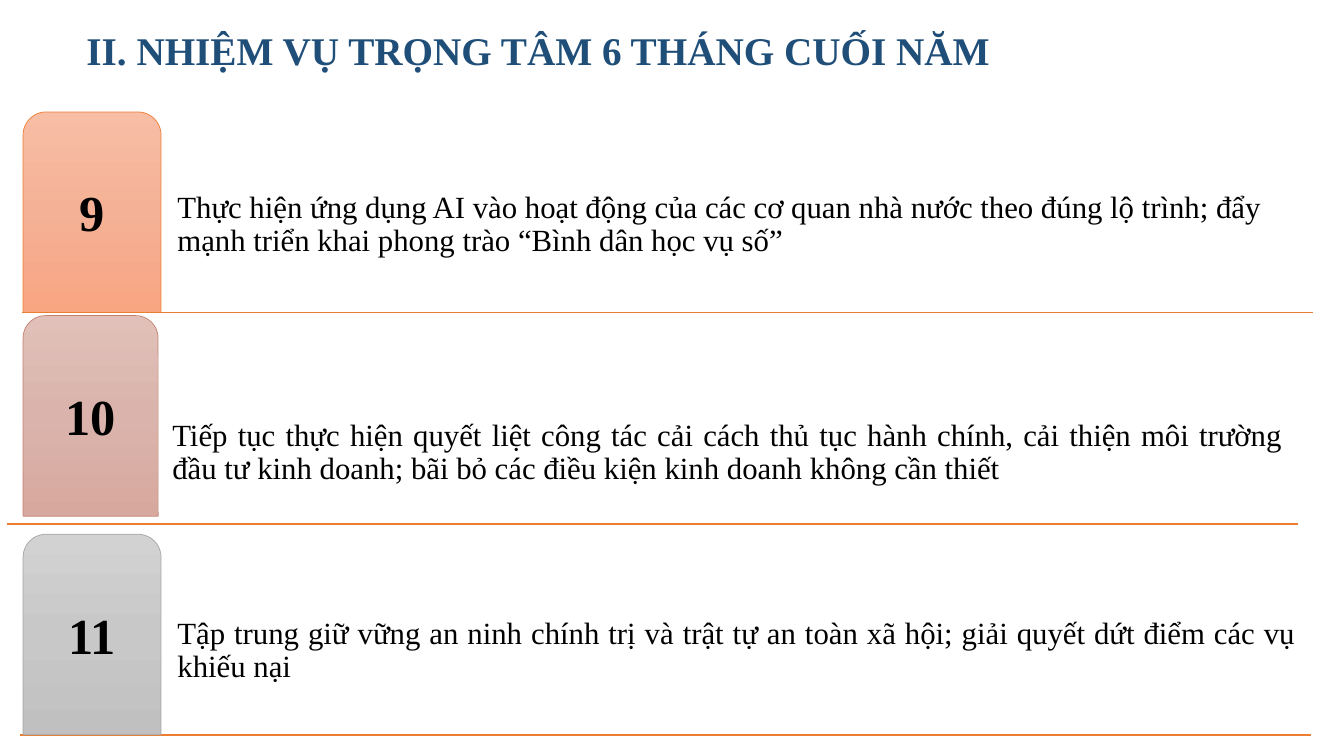
from copy import deepcopy

from pptx import Presentation
from pptx.dml.color import RGBColor
from pptx.enum.shapes import MSO_CONNECTOR, MSO_SHAPE
from pptx.enum.text import MSO_ANCHOR as Anchor, PP_ALIGN as Align
from pptx.oxml.ns import qn
from pptx.util import Pt
from lxml.etree import SubElement


def color(value):
    return RGBColor.from_string(value)


def write(shape, text, size, shade, bold, align, anchor, inset):
    frame = shape.text_frame
    frame.text = text
    frame.word_wrap = True
    frame.vertical_anchor = anchor
    frame.margin_left = frame.margin_right = Pt(inset)
    frame.margin_top = frame.margin_bottom = Pt(inset)
    para = frame.paragraphs[0]
    para.alignment = align
    para.line_spacing = 0.9
    font = para.runs[0].font
    font.name = "Times New Roman"
    font.size = Pt(size)
    font.bold = bold
    font.color.rgb = color(shade)


deck = Presentation()
deck.slide_width, deck.slide_height = Pt(960), Pt(540)
page = deck.slides.add_slide(deck.slide_layouts[6])

title = page.shapes.add_textbox(Pt(54.7), Pt(15.1), Pt(668), Pt(41))
write(title, "II. NHIỆM VỤ TRỌNG TÂM 6 THÁNG CUỐI NĂM", 28, "1F4E79", True,
      Align.LEFT, Anchor.TOP, 3.6)
title.text_frame.margin_left = title.text_frame.margin_right = Pt(7.2)
title.text_frame.paragraphs[0].line_spacing = 1.0

for left, top in [(14.4, 524.9), (5, 374.4), (15.8, 223.4)]:
    rule = page.shapes.add_connector(
        MSO_CONNECTOR.STRAIGHT, Pt(left), Pt(top), Pt(left + 922.3), Pt(top))
    rule.line.color.rgb = color("ED7D31")
    rule.line.width = Pt(1)
    SubElement(rule._element.spPr, qn("a:effectLst"))

tasks = [
    ("9", 80, 98.6, ["F7BDA5", "F5B196", "F8A582"], "ED7D31",
     "Thực hiện ứng dụng AI vào hoạt động của các cơ quan nhà nước theo đúng lộ trình; "
     "đẩy mạnh triển khai phong trào “Bình dân học vụ số”",
     (123.1, 113, 828.7, 74.9), Align.LEFT),
    ("10", 225.4, 96.5, ["E0C0B9", "DAB4AC", "D7A89E"], "C48170",
     "Tiếp tục thực hiện quyết liệt công tác cải cách thủ tục hành chính, cải thiện môi trường "
     "đầu tư kinh doanh; bãi bỏ các điều kiện kinh doanh không cần thiết",
     (119.5, 207.4, 799.9, 143.3), Align.JUSTIFY),
    ("11", 381.6, 98.6, ["D2D2D2", "C8C8C8", "C0C0C0"], "A5A5A5",
     "Tập trung giữ vững an ninh chính trị và trật tự an toàn xã hội; "
     "giải quyết dứt điểm các vụ khiếu nại",
     (123.1, 374.4, 805.7, 118.1), Align.JUSTIFY),
]

for number, top, width, shades, outline, text, place, align in tasks:
    box = page.shapes.add_textbox(*[Pt(length) for length in place])
    write(box, text, 22, "000000", False, align, Anchor.BOTTOM, 3.6)

    tab = page.shapes.add_shape(
        MSO_SHAPE.ROUND_2_SAME_RECTANGLE, Pt(16.5), Pt(top), Pt(width), Pt(143.3))
    tab.shadow.inherit = False
    tab.adjustments[0] = 0.167
    tab.fill.gradient()
    tab.fill.gradient_angle = 270
    stops = tab._element.spPr.find(qn("a:gradFill")).find(qn("a:gsLst"))
    stops.append(deepcopy(stops[0]))
    for stop, shade, position in zip(tab.fill.gradient_stops, shades, [0, 0.5, 1]):
        stop.color.rgb = color(shade)
        stop.position = position
    tab.line.color.rgb = color(outline)
    tab.line.width = Pt(0.5)
    write(tab, number, 36, "000000", True, Align.CENTER, Anchor.MIDDLE, 5)

deck.save("out.pptx")
